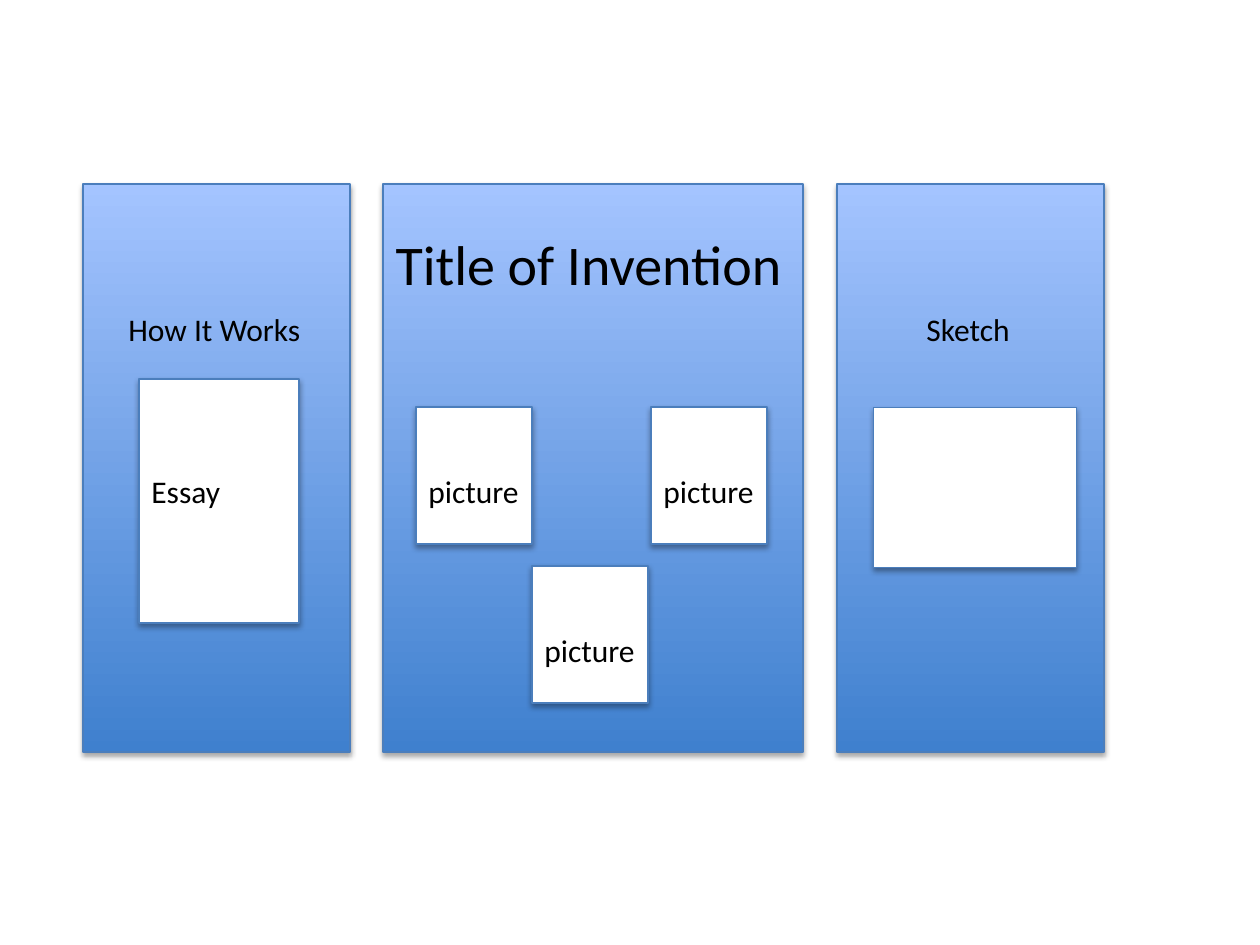
import pptx
import pptx.dml.color
import pptx.enum.shapes
import pptx.enum.text
import pptx.oxml
import pptx.oxml.ns
import pptx.util

RGBColor = pptx.dml.color.RGBColor
BLACK = RGBColor(0x00, 0x00, 0x00)
WHITE = RGBColor(0xFF, 0xFF, 0xFF)
OUTLINE = RGBColor(0x4B, 0x7E, 0xBC)
PANEL_DARK = RGBColor(0x3F, 0x80, 0xCE)
PANEL_LIGHT = RGBColor(0xA4, 0xC4, 0xFF)

SHADOW = (
    f'<a:outerShdw {pptx.oxml.ns.nsdecls("a")} blurRad="40000" dist="23000" '
    'dir="5400000" rotWithShape="0"><a:srgbClr val="000000">'
    '<a:alpha val="35000"/></a:srgbClr></a:outerShdw>'
)


def px(n):
    return pptx.util.Emu(round(n * 914400 / 126))


class Board:
    font = "Calibri"

    def __init__(self, s):
        self.s = s

    def rect(self, x, y, w, h):
        sp = self.s.shapes.add_shape(
            pptx.enum.shapes.MSO_SHAPE.RECTANGLE, px(x), px(y), px(w), px(h))
        sp.line.color.rgb = OUTLINE
        sp.line.width = pptx.util.Pt(0.75)
        sp.shadow.inherit = False
        effects = sp.element.spPr.find(pptx.oxml.ns.qn("a:effectLst"))
        effects.append(pptx.oxml.parse_xml(SHADOW))
        return sp

    def panel(self, x, w):
        sp = self.rect(x, 184, w, 568)
        sp.fill.gradient()
        sp.fill.gradient_angle = 90
        for stop, color in zip(sp.fill.gradient_stops, (PANEL_DARK, PANEL_LIGHT)):
            stop.color.rgb = color

    def card(self, x, y, w, h, rotation=0):
        sp = self.rect(x, y, w, h)
        sp.fill.solid()
        sp.fill.fore_color.rgb = WHITE
        sp.rotation = rotation

    def set_text(self, sp, text, size, wrap=True):
        tf = sp.text_frame
        tf.word_wrap = wrap
        tf.auto_size = pptx.enum.text.MSO_AUTO_SIZE.SHAPE_TO_FIT_TEXT
        tf.vertical_anchor = pptx.enum.text.MSO_ANCHOR.TOP
        p = tf.paragraphs[0]
        p.alignment = pptx.enum.text.PP_ALIGN.LEFT
        r = p.add_run()
        r.text = text
        r.font.name = self.font
        r.font.size = pptx.util.Pt(size)
        r.font.color.rgb = BLACK

    def title(self, x, y, w, h, text):
        sp = self.s.shapes.title
        sp.left, sp.top, sp.width, sp.height = px(x), px(y), px(w), px(h)
        self.s.shapes.element.append(sp.element)
        self.set_text(sp, text, 32)

    def label(self, x, y, w, text, wrap=True):
        sp = self.s.shapes.add_textbox(px(x), px(y), px(w), px(50))
        self.set_text(sp, text, 18, wrap)


def main():
    prs = pptx.Presentation()
    prs.slide_width, prs.slide_height = px(1260), px(945)
    board = Board(prs.slides.add_slide(prs.slide_layouts[5]))

    for x, w in ((83, 267), (383, 420), (837, 267)):
        board.panel(x, w)
    board.title(383, 223, 454, 81, "Title of Invention")

    for x, y in ((416, 407), (651, 407), (532, 566)):
        board.card(x, y, 116, 137)
        board.label(x, y + 59, 116, "picture", wrap=False)

    board.label(116, 304, 267, "How It Works")
    board.card(139, 379, 160, 244)
    board.label(139, 466, 127, "Essay")

    board.label(914, 304, 267, "Sketch")
    board.card(895, 386, 160, 203, rotation=270)

    prs.save("out.pptx")


if __name__ == "__main__":
    main()
